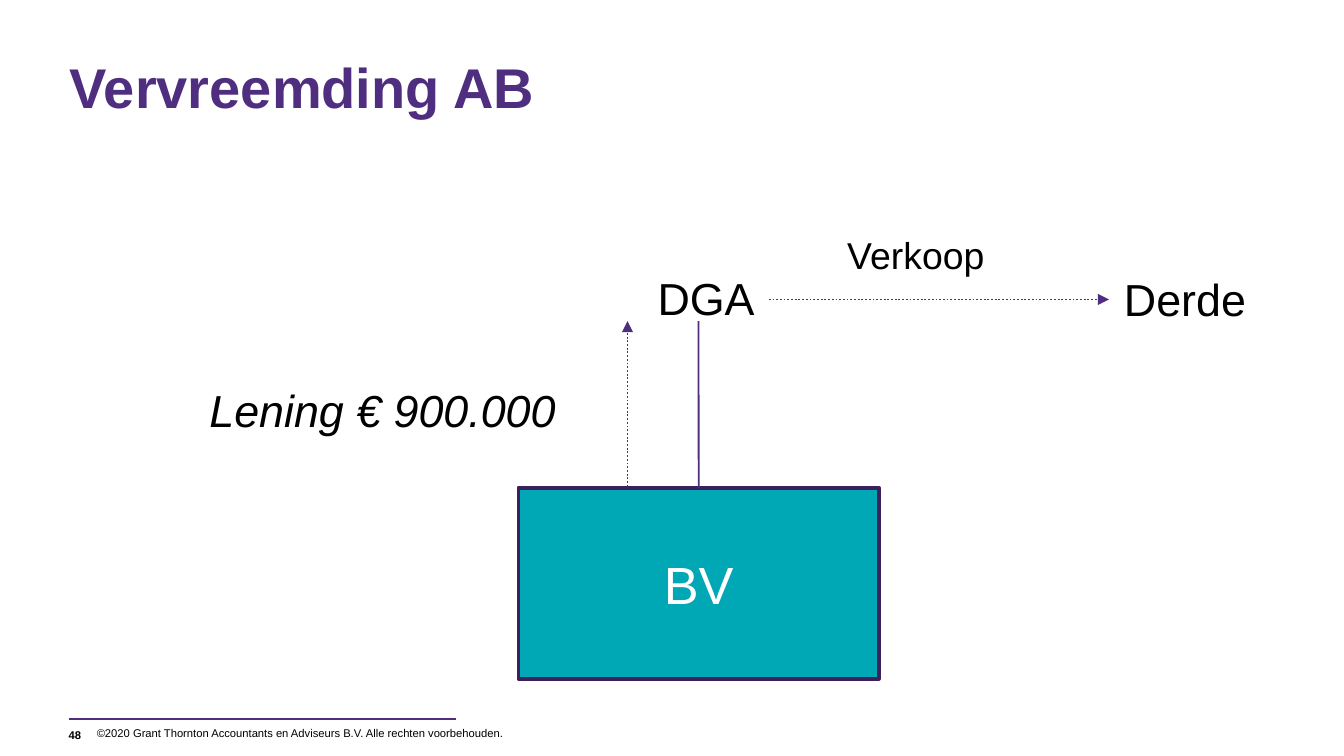
from dataclasses import dataclass

from lxml.etree import SubElement
from pptx import Presentation
from pptx.dml.color import RGBColor as RGB
from pptx.enum.dml import MSO_LINE_DASH_STYLE as DASH
from pptx.enum.shapes import MSO_CONNECTOR as CONNECTOR, MSO_SHAPE as SHAPE
from pptx.enum.text import MSO_ANCHOR as ANCHOR, PP_ALIGN as ALIGN
from pptx.oxml.ns import qn
from pptx.util import Cm, Pt


@dataclass(frozen=True)
class Theme:
    font: str = "Arial"
    purple: RGB = RGB(0x4F, 0x2D, 0x7F)
    dark_purple: RGB = RGB(0x3A, 0x21, 0x5E)
    teal: RGB = RGB(0x00, 0xA7, 0xB5)
    black: RGB = RGB(0, 0, 0)
    white: RGB = RGB(255, 255, 255)
    title: int = 30
    company: int = 28
    label: int = 24
    caption: int = 20
    footer: int = 6


THEME = Theme()


def write(frame, text, size, color, align, **styles):
    paragraph = frame.paragraphs[0]
    paragraph.alignment = align
    run = paragraph.add_run()
    run.text = text
    run.font.color.rgb = color
    for name, value in {"name": THEME.font, "size": Pt(size), **styles}.items():
        setattr(run.font, name, value)


def add_text(slide, area, text, size, color, anchor=ANCHOR.MIDDLE, **styles):
    """Left-aligned text without margins."""
    frame = slide.shapes.add_textbox(*map(Cm, area)).text_frame
    layout = {"word_wrap": True, "vertical_anchor": anchor, "margin_left": 0,
              "margin_right": 0, "margin_top": 0, "margin_bottom": 0}
    for name, value in layout.items():
        setattr(frame, name, value)
    write(frame, text, size, color, ALIGN.LEFT, **styles)


def add_box(slide, area, text, size, color=THEME.black, fill=None,
            border=THEME.white, **styles):
    box = slide.shapes.add_shape(SHAPE.RECTANGLE, *map(Cm, area))
    box.shadow.inherit = False
    if fill is None:
        box.fill.background()
    else:
        box.fill.solid()
        box.fill.fore_color.rgb = fill
    box.line.color.rgb = border
    box.line.width = Pt(2)
    box.text_frame.word_wrap = True
    box.text_frame.vertical_anchor = ANCHOR.MIDDLE
    write(box.text_frame, text, size, color, ALIGN.CENTER, **styles)
    return box


def add_line(slide, start, end, width=1):
    line = slide.shapes.add_connector(CONNECTOR.STRAIGHT, *map(Cm, start + end))
    line.line.color.rgb = THEME.purple
    line.line.width = Pt(width)
    SubElement(line._element.spPr, qn("a:effectLst"))
    return line


def add_dotted_arrow(slide, start, end):
    arrow = add_line(slide, start, end)
    arrow.line.dash_style = DASH.ROUND_DOT
    SubElement(arrow.line._get_or_add_ln(), qn("a:tailEnd"), type="triangle")


def add_footer(slide):
    add_text(slide, (1.83, 13.61, 8.36, 0.51),
             "©2020 Grant Thornton Accountants en Adviseurs B.V. "
             "Alle rechten voorbehouden.", THEME.footer, THEME.black)
    add_line(slide, (1.3, 13.59), (8.61, 13.59), 1.5)
    add_text(slide, (1.3, 13.64, 0.51, 0.51), "48",
             THEME.footer, THEME.black, bold=True)


def add_diagram(slide):
    company = add_box(slide, (9.8, 9.22, 6.81, 3.61), "BV", THEME.company,
                      THEME.white, THEME.teal, THEME.dark_purple)
    add_box(slide, (3.18, 7.06, 8.1, 1.37), "Lening € 900.000",
            THEME.label, italic=True)
    add_box(slide, (11.35, 4.83, 3.99, 1.6), "DGA", THEME.label)
    add_box(slide, (14.96, 4.01, 4.7, 1.6), "Verkoop", THEME.caption)
    add_box(slide, (20.4, 4.85, 3.99, 1.6), "Derde", THEME.label)

    ownership = add_line(slide, (13.2, 6.07), (13.2, 9.22))
    ownership.end_connect(company, 0)
    add_dotted_arrow(slide, (11.86, 9.2), (11.86, 6.07))
    add_dotted_arrow(slide, (14.53, 5.66), (20.96, 5.66))


def main():
    deck = Presentation()
    deck.slide_width, deck.slide_height = Cm(25.4), Cm(14.29)
    slide = deck.slides.add_slide(deck.slide_layouts[6])
    add_footer(slide)
    add_text(slide, (1.32, 0.99, 22.78, 2.34), "Vervreemding AB",
             THEME.title, THEME.purple, ANCHOR.TOP, bold=True)
    add_diagram(slide)
    deck.save("out.pptx")


if __name__ == "__main__":
    main()
